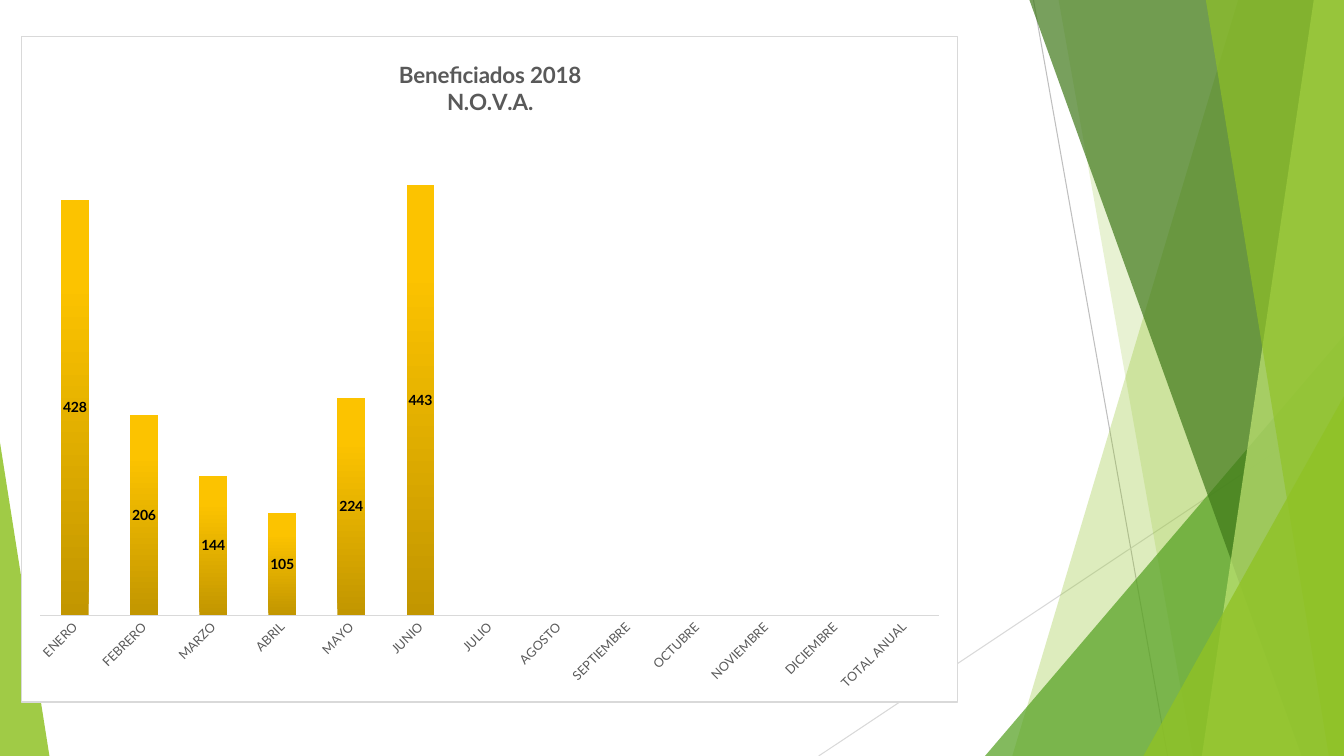
from copy import deepcopy
from dataclasses import dataclass

from lxml.etree import SubElement
from pptx import Presentation
from pptx.chart.chart import Chart
from pptx.chart.data import CategoryChartData
from pptx.dml.color import RGBColor
from pptx.dml.fill import FillFormat
from pptx.enum.chart import XL_CHART_TYPE as Kind
from pptx.enum.chart import XL_LABEL_POSITION as Spot
from pptx.enum.chart import XL_TICK_MARK as Tick
from pptx.enum.shapes import MSO_CONNECTOR as Link
from pptx.enum.shapes import MSO_SHAPE as Form
from pptx.oxml import parse_xml
from pptx.oxml.ns import nsdecls, qn
from pptx.shapes.autoshape import Shape
from pptx.slide import Slide
from pptx.util import Inches, Pt

WIDE, HIGH = 13.33, 7.5
FONT = "Lato"
GREY, PALE, LIME = "595959", "D9D9D9", "90C226"
MONTHS = ["ENERO", "FEBRERO", "MARZO", "ABRIL", "MAYO", "JUNIO", "JULIO",
          "AGOSTO", "SEPTIEMBRE", "OCTUBRE", "NOVIEMBRE", "DICIEMBRE"]
COUNTS = [428, 206, 144, 105, 224, 443]
GOLD = [(0, "C29600"), (0.8, "FCC300"), (1, "FDC400")]
INNER = '<c:layoutTarget val="inner"/>'


@dataclass
class Ray:
    start: tuple[float, float]
    end: tuple[float, float]
    color: str


@dataclass
class Pane:
    """A full-height band from a slanted left edge to the slide's right edge."""
    top: float
    foot: float
    color: str
    alpha: int


@dataclass
class Wedge:
    """A right triangle standing on the slide's bottom edge."""
    left: float
    top: float
    width: float
    peak: int
    color: str
    alpha: int


RAYS = [
    Ray((10.25, 0), (11.58, HIGH), "BFBFBF"),
    Ray((WIDE, 4.03), (8.12, HIGH), PALE),
]
FACETS = [
    Pane(12.28, 10.04, LIME, 30),
    Pane(10.5, 11.83, LIME, 20),
    Wedge(9.77, 3.33, 3.56, 1, "54A021", 72),
    Pane(10.21, 12.91, "3F7819", 70),
    Pane(13.03, 11.92, "C0E474", 70),
    Pane(11.96, 13.18, LIME, 65),
    Wedge(11.34, 3.93, 1.99, 1, LIME, 80),
    Wedge(0, 4.39, 0.49, 0, LIME, 85),
]


def rgb(code: str) -> RGBColor:
    return RGBColor.from_string(code)


def paint(fill: FillFormat, code: str) -> None:
    fill.solid()
    fill.fore_color.rgb = rgb(code)


def draw_ray(slide: Slide, ray: Ray) -> None:
    ends = [Inches(v) for v in ray.start + ray.end]
    line = slide.shapes.add_connector(Link.STRAIGHT, *ends)
    line.line.color.rgb = rgb(ray.color)
    line.line.width = Pt(0.75)
    SubElement(line._element.spPr, qn("a:effectLst"))


def add_pane(slide: Slide, pane: Pane) -> Shape:
    spots = [(pane.top, 0), (WIDE, 0), (WIDE, HIGH), (pane.foot, HIGH)]
    first, *rest = [(Inches(x), Inches(y)) for x, y in spots]
    path = slide.shapes.build_freeform(*first)
    path.add_line_segments(rest, close=True)
    return path.convert_to_shape()


def add_wedge(slide: Slide, wedge: Wedge) -> Shape:
    shape = slide.shapes.add_shape(
        Form.ISOSCELES_TRIANGLE, Inches(wedge.left), Inches(wedge.top),
        Inches(wedge.width), Inches(HIGH - wedge.top))
    shape.adjustments[0] = wedge.peak
    return shape


def draw_facet(slide: Slide, facet: Pane | Wedge) -> None:
    add = add_pane if isinstance(facet, Pane) else add_wedge
    shape = add(slide, facet)
    shape.shadow.inherit = False
    shape.line.fill.background()
    paint(shape.fill, facet.color)
    tint = shape._element.spPr.find(qn("a:solidFill"))[0]
    SubElement(tint, qn("a:alpha"), val=str(facet.alpha * 1000))


def place(parent, x: float, y: float, size: str = "") -> None:
    """Fix the position of a chart part, in shares of the chart area."""
    for old in parent.findall(qn("c:layout")):
        parent.remove(old)
    node = parse_xml(
        f'<c:layout {nsdecls("c")}><c:manualLayout>{size and INNER}'
        '<c:xMode val="edge"/><c:yMode val="edge"/>'
        f'<c:x val="{x}"/><c:y val="{y}"/>{size}'
        '</c:manualLayout></c:layout>')
    text = parent.find(qn("c:tx"))
    if text is None:
        parent.insert(0, node)
    else:
        text.addnext(node)


def set_title(chart: Chart) -> None:
    frame = chart.chart_title.text_frame
    frame.text = "Beneficiados 2018\nN.O.V.A."
    for para in frame.paragraphs:
        font = para.font
        font.name, font.size, font.bold = FONT, Pt(16), True
        font.color.rgb = rgb(GREY)
    chart.chart_title.include_in_layout = False
    place(chart.chart_title._element, 0.4, 0.03)


def set_axes(chart: Chart) -> None:
    months, values = chart.category_axis, chart.value_axis
    values.visible = values.has_major_gridlines = False
    values.minimum_scale, values.maximum_scale = 0, 500
    months.major_tick_mark = months.minor_tick_mark = Tick.NONE
    months.format.line.color.rgb = rgb(PALE)
    months.format.line.width = Pt(1)
    font = months.tick_labels.font
    font.name, font.size = FONT, Pt(9)
    font.color.rgb = rgb(GREY)
    body = months._element.find(qn("c:txPr")).find(qn("a:bodyPr"))
    body.set("rot", str(-45 * 60000))


def set_bars(chart: Chart) -> None:
    plot = chart.plots[0]
    plot.gap_width, plot.overlap = 150, 100
    plot.vary_by_categories = False
    bars = plot.series[0]
    fill = bars.format.fill
    fill.gradient()
    fill.gradient_angle = 90
    stops = bars._element.xpath(".//a:gsLst")[0]
    stops.append(deepcopy(stops[-1]))
    for stop, (spot, code) in zip(fill.gradient_stops, GOLD):
        stop.position = spot
        stop.color.rgb = rgb(code)
    labels = bars.data_labels
    labels.show_value = True
    labels.position = Spot.CENTER
    font = labels.font
    font.name, font.size, font.bold = FONT, Pt(10), True
    font.color.rgb = rgb("000000")


def draw_chart(slide: Slide) -> None:
    data = CategoryChartData()
    data.categories = MONTHS + ["TOTAL ANUAL"]
    blanks = [None] * (len(MONTHS) + 1 - len(COUNTS))
    data.add_series("Series 1", COUNTS + blanks)
    box = [Inches(v) for v in (0.21, 0.36, 9.29, 6.61)]
    chart = slide.shapes.add_chart(Kind.COLUMN_STACKED, *box, data).chart
    chart.has_legend = False
    chart.font.name, chart.font.size = FONT, Pt(10)
    chart.font.color.rgb = rgb("000000")
    set_title(chart)
    set_axes(chart)
    set_bars(chart)
    root = chart._chartSpace
    place(root.chart.plotArea, 0.02, 0.14,
          '<c:w val="0.96"/><c:h val="0.73"/>')
    root.find(qn("c:txPr")).addprevious(parse_xml(
        f'<c:spPr {nsdecls("c", "a")}>'
        '<a:solidFill><a:srgbClr val="FFFFFF"/></a:solidFill>'
        f'<a:ln w="{Pt(0.75)}"><a:solidFill><a:srgbClr val="{PALE}"/>'
        '</a:solidFill></a:ln></c:spPr>'))


def main() -> None:
    deck = Presentation()
    deck.slide_width, deck.slide_height = Inches(WIDE), Inches(HIGH)
    slide = deck.slides.add_slide(deck.slide_layouts[6])
    paint(slide.background.fill, "FFFFFF")
    for ray in RAYS:
        draw_ray(slide, ray)
    for facet in FACETS:
        draw_facet(slide, facet)
    draw_chart(slide)
    deck.save("out.pptx")


if __name__ == "__main__":
    main()
